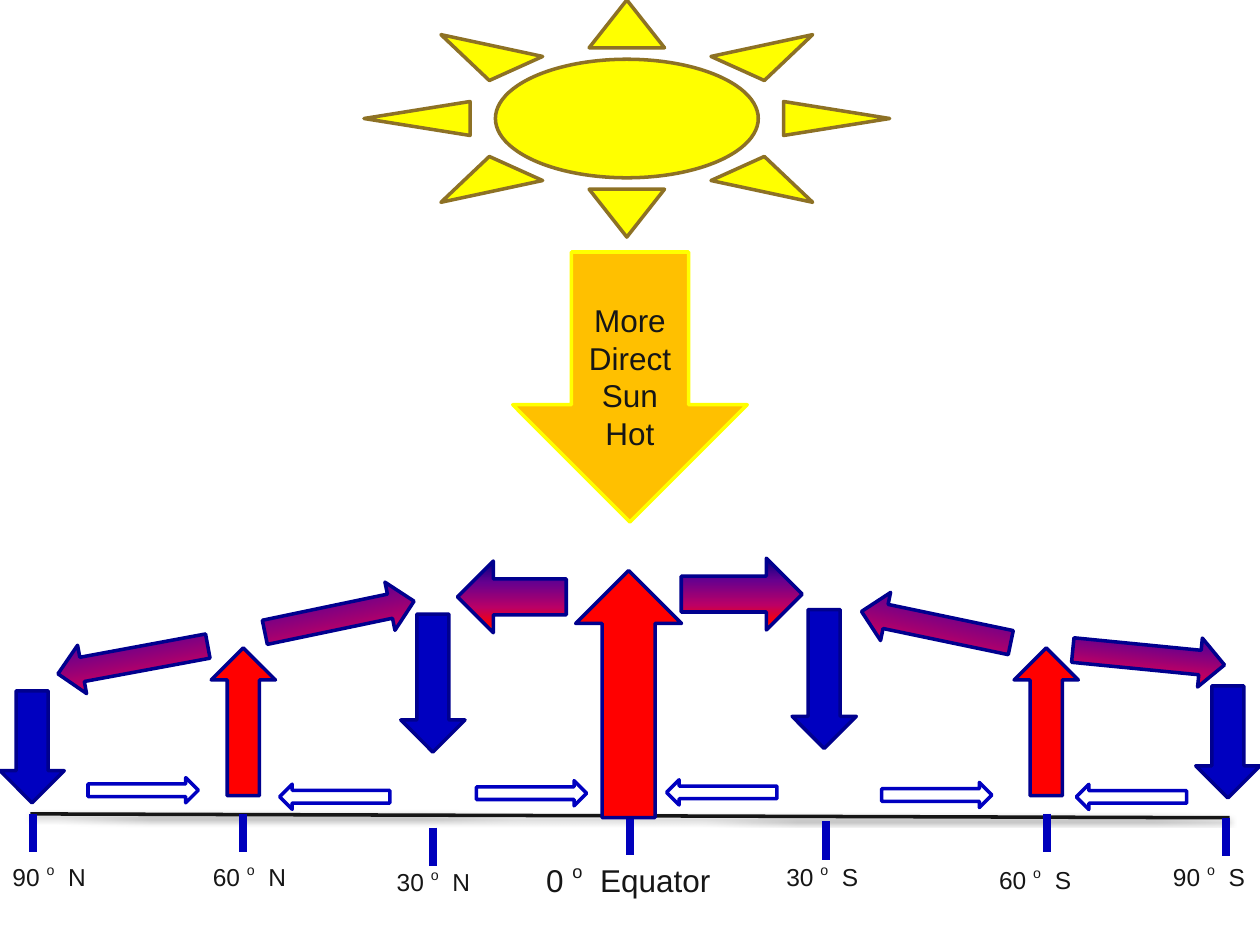
from dataclasses import dataclass

import pptx
import pptx.dml.color
import pptx.enum.shapes
import pptx.enum.text
import pptx.oxml
import pptx.oxml.ns
import pptx.util
from lxml import etree

Pt = pptx.util.Pt
RGB = pptx.dml.color.RGBColor
Form = pptx.enum.shapes.MSO_SHAPE
Text = pptx.enum.text
qn = pptx.oxml.ns.qn

INK = RGB(0x16, 0x16, 0x16)
RED = RGB(0xFF, 0x00, 0x00)
BLUE = RGB(0x00, 0x00, 0xC0)
NAVY = RGB(0x00, 0x00, 0x8E)
TICK = RGB(0x00, 0x00, 0xBC)
WHITE = RGB(0xFF, 0xFF, 0xFF)
AMBER = RGB(0xFF, 0xC0, 0x00)
YELLOW = RGB(0xFF, 0xFF, 0x00)
BROWN = RGB(0x8D, 0x71, 0x25)
# Warm-to-cold fill: stop in percent, colour
BLEND = [
    (0, RGB(0x00, 0x00, 0x82)),
    (30, RGB(0x66, 0x00, 0x8F)),
    (65, RGB(0xBA, 0x00, 0x66)),
    (90, RED),
    (100, RGB(0xFF, 0x82, 0x00)),
]
FONT = "Arial"


@dataclass
class Mark:
    """A tick on the ground line and its latitude label."""
    x: float
    y: float
    left: float
    top: float
    deg: str
    side: str
    wide: float = 57.4
    high: float = 24.5
    size: int = 14


@dataclass
class Arrow:
    """A block arrow; a fill of None means the blend."""
    form: Form
    left: float
    top: float
    wide: float
    high: float
    fill: RGB | None
    edge: RGB = NAVY
    turn: float = 0


def rise(left: float, top: float, wide: float = 36.7, high: float = 84.5) -> Arrow:
    return Arrow(Form.UP_ARROW, left, top, wide, high, RED)


def sink(left: float, top: float, high: float) -> Arrow:
    return Arrow(Form.DOWN_ARROW, left, top, 36.7, high, BLUE)


def drift(form: Form, left: float, top: float, turn: float) -> Arrow:
    return Arrow(form, left, top, 87.1, 28.1, None, turn=turn)


def breeze(form: Form, left: float, top: float) -> Arrow:
    return Arrow(form, left, top, 63, 14.4, WHITE, BLUE)


EAST, WEST = Form.RIGHT_ARROW, Form.LEFT_ARROW

MARKS = [
    Mark(18.7, 465, 0, 488.9, "90", "N"),
    Mark(138.8, 465, 114.5, 488.9, "60", "N"),
    Mark(247.3, 473, 219.6, 491.4, "30", "N"),
    Mark(360, 466.3, 305, 488.2, "0", "Equator", 110.2, 29, 18),
    Mark(472.2, 469.3, 442.2, 488.9, "30", "S"),
    Mark(598.3, 464.9, 563.8, 490.5, "60", "S"),
    Mark(700.6, 467.2, 663.2, 488.5, "90", "S"),
]

ARROWS = [
    # Rising air
    rise(329, 326, 60.5, 141.2),
    rise(120.7, 370.2),
    rise(579.5, 370.2),
    # High winds beside the equator
    Arrow(EAST, 389.3, 319, 69.1, 41, None),
    Arrow(WEST, 261.4, 320.6, 62.2, 41, None),
    # Sinking air
    sink(229, 350.9, 78.9),
    sink(452.6, 348.3, 79.4),
    sink(0, 394.8, 64),
    sink(683.3, 392, 64),
    # High winds at the outer cells
    drift(WEST, 32.4, 363.1, -10.5),
    drift(EAST, 612.8, 361.7, 5.6),
    drift(WEST, 491.4, 344.3, 11.8),
    drift(EAST, 150.4, 338.4, -11.8),
    # Ground winds
    breeze(EAST, 50.3, 444.4),
    breeze(WEST, 159.8, 448.1),
    breeze(EAST, 272.2, 446.1),
    breeze(WEST, 380.9, 445.6),
    breeze(EAST, 503.8, 447.1),
    breeze(WEST, 615, 448.2),
]


def draw_line(page, x: float, y: float, far: float, low: float,
              hue: RGB, weight: float):
    line = page.shapes.add_connector(
        pptx.enum.shapes.MSO_CONNECTOR.STRAIGHT, Pt(x), Pt(y), Pt(far), Pt(low))
    line.line.color.rgb = hue
    line.line.width = Pt(weight)
    return etree.SubElement(line._element.spPr, qn("a:effectLst"))


def add_run(para, words: str, size: int, lift: int = 0) -> None:
    run = para.add_run()
    run.text = words
    run.font.name = FONT
    run.font.size = Pt(size)
    run.font.color.rgb = INK
    if lift:
        run._r.get_or_add_rPr().set("baseline", str(lift * 1000))


def draw_mark(page, mark: Mark) -> None:
    draw_line(page, mark.x, mark.y, mark.x, mark.y + 22, TICK, 4.5)
    box = page.shapes.add_textbox(
        Pt(mark.left), Pt(mark.top), Pt(mark.wide), Pt(mark.high))
    frame = box.text_frame
    frame.word_wrap = False
    frame.auto_size = Text.MSO_AUTO_SIZE.SHAPE_TO_FIT_TEXT
    para = frame.paragraphs[0]
    add_run(para, mark.deg + " ", mark.size)
    add_run(para, "o", mark.size, 45)
    add_run(para, "  " + mark.side, mark.size)


def blend(fill) -> None:
    fill.gradient()
    fill.gradient_angle = 270
    stops = fill._xPr.find(qn("a:gradFill")).find(qn("a:gsLst"))
    for stop in list(stops):
        stops.remove(stop)
    for place, hue in BLEND:
        stop = etree.SubElement(stops, qn("a:gs"), pos=str(place * 1000))
        etree.SubElement(stop, qn("a:srgbClr"), val=str(hue))


def draw_arrow(page, item: Arrow):
    shape = page.shapes.add_shape(
        item.form, Pt(item.left), Pt(item.top), Pt(item.wide), Pt(item.high))
    shape.shadow.inherit = False
    shape.rotation = item.turn
    if item.fill is None:
        blend(shape.fill)
    else:
        shape.fill.solid()
        shape.fill.fore_color.rgb = item.fill
    shape.line.color.rgb = item.edge
    shape.line.width = Pt(2)
    return shape


def main() -> None:
    deck = pptx.Presentation()
    deck.slide_width, deck.slide_height = Pt(720), Pt(540)
    page = deck.slides.add_slide(deck.slide_layouts[6])

    # Ground line with a soft shadow
    effects = draw_line(page, 17.3, 465.1, 702.7, 467.3, INK, 2)
    shade = etree.SubElement(effects, qn("a:outerShdw"), blurRad=str(Pt(3.1)),
                             dist=str(Pt(1.6)), dir="5400000", rotWithShape="0")
    hue = etree.SubElement(shade, qn("a:srgbClr"), val="000000")
    etree.SubElement(hue, qn("a:alpha"), val="38000")

    for mark in MARKS:
        draw_mark(page, mark)

    # Sunlight on the equator
    beam = draw_arrow(page, Arrow(Form.DOWN_ARROW, 293, 144, 134, 154.3, AMBER, YELLOW))
    frame = beam.text_frame
    frame.word_wrap = True
    frame.margin_top = Pt(25)
    frame.vertical_anchor = Text.MSO_ANCHOR.MIDDLE
    para = frame.paragraphs[0]
    para.alignment = Text.PP_ALIGN.CENTER
    add_run(para, "More", 18)
    para.add_line_break()
    add_run(para, "Direct Sun Hot", 18)

    for item in ARROWS:
        draw_arrow(page, item)

    # Sun
    draw_arrow(page, Arrow(Form.SUN, 208, 0, 300.4, 135.5, YELLOW, BROWN))
    deck.save("out.pptx")


if __name__ == "__main__":
    main()
